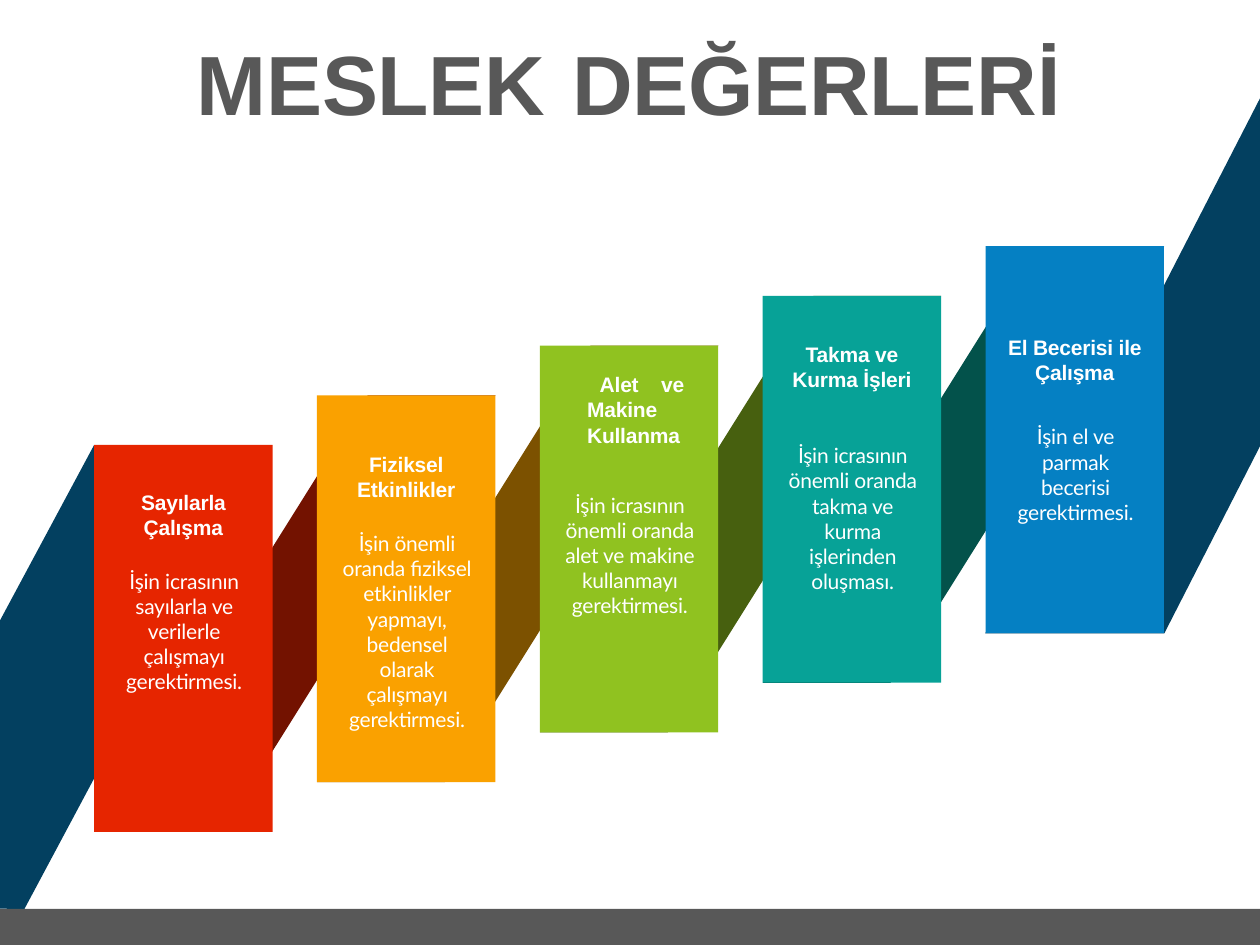
"""Build the slide of five rising cards on professional values."""
from dataclasses import dataclass

import pptx
import pptx.dml.color
import pptx.enum.shapes
import pptx.enum.text
import pptx.oxml.ns
import pptx.util
from lxml import etree

Pt = pptx.util.Pt
ALIGN = pptx.enum.text.PP_ALIGN
LEFT, BOTTOM = 53.8, 475.4
STEP_X, STEP_Y = 127.35, 28.4
CARD_W, CARD_H, BAND_W = 102, 221.1, 73


@dataclass
class Card:
    heading: str
    body: list[str]
    fill: str
    top_inset: float
    gap: float
    band: str | None = None
    justified: bool = False


CARDS = [
    Card("Sayılarla Çalışma",
         ["İşin icrasının sayılarla ve verilerle", "çalışmayı gerektirmesi."],
         "E62500", 25.4, 16.2, "731200"),
    Card("Fiziksel Etkinlikler",
         ["İşin önemli oranda fiziksel etkinlikler yapmayı, bedensel olarak",
          "çalışmayı gerektirmesi."],
         "FAA100", 32, 16.5, "7C5100"),
    Card("Alet ve Makine Kullanma",
         ["İşin icrasının önemli oranda alet ve makine kullanmayı gerektirmesi."],
         "90C220", 14.9, 25.6, "47600F", True),
    Card("Takma ve Kurma İşleri",
         ["İşin icrasının önemli oranda takma ve kurma işlerinden oluşması."],
         "07A297", 26.1, 29, "03524B"),
    Card("El Becerisi ile Çalışma",
         ["İşin el ve parmak becerisi gerektirmesi."],
         "0580C3", 50.5, 22.2),
]


def color(value: str) -> pptx.dml.color.RGBColor:
    return pptx.dml.color.RGBColor.from_string(value)


def paint(sp, fill: str) -> None:
    sp.shadow.inherit = False
    sp.fill.solid()
    sp.fill.fore_color.rgb = color(fill)
    sp.line.fill.background()


def rectangle(s, x: float, y: float, w: float, h: float, fill: str):
    sp = s.shapes.add_shape(pptx.enum.shapes.MSO_SHAPE.RECTANGLE,
                            Pt(x), Pt(y), Pt(w), Pt(h))
    paint(sp, fill)
    return sp


def polygon(s, points: list[tuple[float, float]], fill: str) -> None:
    start, *rest = [(Pt(x), Pt(y)) for x, y in points]
    builder = s.shapes.build_freeform(*start, scale=1.0)
    builder.add_line_segments(rest, close=True)
    paint(builder.convert_to_shape(), fill)


def set_frame(tf, top: float) -> None:
    tf.word_wrap = True
    tf.auto_size = pptx.enum.text.MSO_AUTO_SIZE.NONE
    tf.vertical_anchor = pptx.enum.text.MSO_ANCHOR.TOP
    tf.margin_left = tf.margin_right = tf.margin_bottom = 0
    tf.margin_top = Pt(top)


def add_run(p, text: str, font: str, size: float, fill: str, bold: bool) -> None:
    r = p.add_run()
    r.text = text
    r.font.name = font
    r.font.size = Pt(size)
    r.font.bold = bold
    r.font.color.rgb = color(fill)
    r.font._element.set("spc", "-10")


def set_paragraph(p, align, left: float, right: float, indent: float = 0) -> None:
    p.alignment = align
    p.line_spacing = Pt(14.4)
    pPr = p._p.get_or_add_pPr()
    for name, value in (("marL", left), ("marR", right), ("indent", indent)):
        pPr.set(name, str(Pt(value)))


def add_title(s) -> None:
    sp = s.shapes.title
    sp.left, sp.top, sp.width, sp.height = Pt(112.3), Pt(12.2), Pt(607.7), Pt(59.8)
    tf = sp.text_frame
    set_frame(tf, 6)
    p = tf.paragraphs[0]
    p.alignment = ALIGN.LEFT
    qn = pptx.oxml.ns.qn
    tabs = etree.SubElement(p._p.get_or_add_pPr(), qn("a:tabLst"))
    etree.SubElement(tabs, qn("a:tab"), pos=str(Pt(214.6)), algn="l")
    add_run(p, "MESLEK\tDEĞERLERİ", "Arial", 48, "585858", True)


def card_origin(i: int) -> tuple[float, float]:
    return LEFT + i * STEP_X, BOTTOM - CARD_H - i * STEP_Y


def add_band(s, i: int, fill: str) -> None:
    x, y = card_origin(i)
    next_x, next_y = card_origin(i + 1)
    right, bottom = next_x + CARD_W, y + CARD_H
    polygon(s, [(right, next_y), (right - BAND_W, next_y),
                (x, bottom), (x + BAND_W, bottom)], fill)


def add_card(s, i: int, card: Card) -> None:
    tf = rectangle(s, *card_origin(i), CARD_W, CARD_H, card.fill).text_frame
    set_frame(tf, card.top_inset)
    p = tf.paragraphs[0]
    if card.justified:
        set_paragraph(p, ALIGN.JUSTIFY, 27, 19.5, 7.2)
    else:
        set_paragraph(p, ALIGN.CENTER, 8, 8)
    add_run(p, card.heading, "Arial", 12, "FFFFFF", True)
    for n, text in enumerate(card.body):
        p = tf.add_paragraph()
        set_paragraph(p, ALIGN.CENTER, 12.5, 11.5)
        p.space_before = Pt(0 if n else card.gap)
        add_run(p, text, "Lato", 12, "FFFFFF", False)


def main() -> None:
    prs = pptx.Presentation()
    prs.slide_width, prs.slide_height = Pt(720), Pt(540)
    s = prs.slides.add_slide(prs.slide_layouts[5])
    add_title(s)
    polygon(s, [(155.5, 254.3), (LEFT, 254.3), (0, 354.6), (0, 519.2), (13.9, 519.6)],
            "034060")
    polygon(s, [(720, 255), (720, 56.2), (563, 362), (665.3, 362)], "034060")
    rectangle(s, 0, 519.4, 720, 20.6, "585858")
    for i, card in enumerate(CARDS):
        if card.band:
            add_band(s, i, card.band)
    for i, card in enumerate(CARDS):
        add_card(s, i, card)
    prs.save("out.pptx")


if __name__ == "__main__":
    main()
